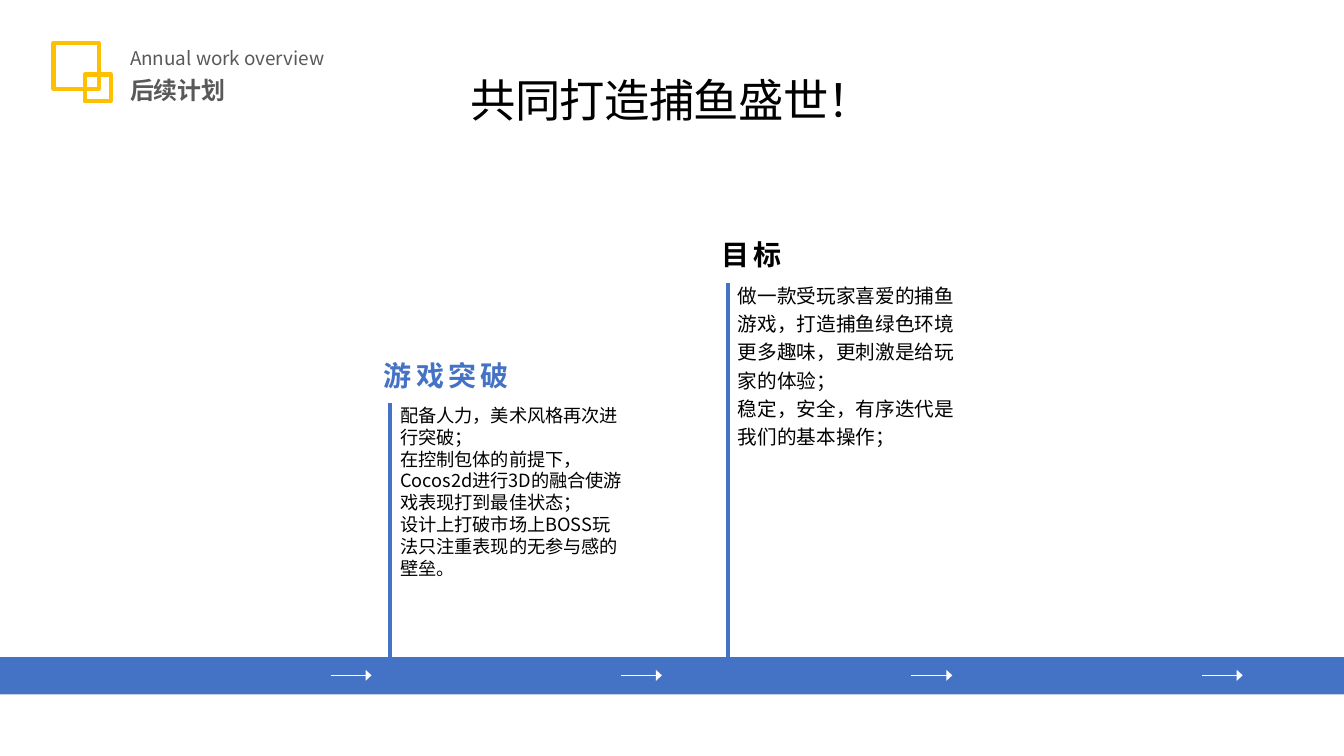
"""Build the follow-up plan slide with two milestones on an arrow band."""
from lxml import etree
from pptx import Presentation
from pptx.dml.color import RGBColor
from pptx.enum.shapes import MSO_CONNECTOR, MSO_SHAPE
from pptx.enum.text import MSO_ANCHOR, MSO_AUTO_SIZE, PP_ALIGN
from pptx.oxml.ns import qn
from pptx.util import Inches, Pt

BLUE = RGBColor(0x44, 0x72, 0xC4)
GOLD = RGBColor(0xFF, 0xC0, 0x02)
GREY = RGBColor(0x59, 0x59, 0x59)
BLACK = RGBColor(0, 0, 0)
WHITE = RGBColor(0xFF, 0xFF, 0xFF)
RECT, TRIANGLE = MSO_SHAPE.RECTANGLE, MSO_SHAPE.ISOSCELES_TRIANGLE
STRAIGHT = MSO_CONNECTOR.STRAIGHT
TOP, BOTTOM = MSO_ANCHOR.TOP, MSO_ANCHOR.BOTTOM
LEFT, CENTER, JUSTIFY = PP_ALIGN.LEFT, PP_ALIGN.CENTER, PP_ALIGN.JUSTIFY
GROW, FIXED = MSO_AUTO_SIZE.SHAPE_TO_FIT_TEXT, MSO_AUTO_SIZE.NONE
CJK, LATIN = "Noto Sans CJK SC", "Arial"

WIDTH, HEIGHT = 13.33, 7.5
BAND_TOP, BAND_HEIGHT = 6.52, 0.37
ARROW_COUNT, ARROW_LEFT, ARROW_PITCH, ARROW_LENGTH = 4, 3.28, 2.88, 0.39
HEAD_WIDTH, HEAD_HEIGHT = 0.11, 0.06
NO_INSET, BODY_INSET, BOX_INSET = (0, 0, 0, 0), (0.1, 0, 0.1, 0.05), (0.1, 0.05, 0.1, 0.05)

LOGO_SQUARES = [(0.53, 0.43, 0.45), (0.84, 0.74, 0.26)]
HEADERS = [
    ("Annual work overview", (1.29, 0.46, 2.26, 0.23), JUSTIFY,
     {"size": Pt(13.5), "bold": False}),
    ("后续计划", (1.29, 0.75, 2.52, 0.29), LEFT, {"size": Pt(17.1), "bold": True}),
]
TITLE = "共同打造捕鱼盛世！"
MILESTONES = [
    {"heading": "游戏突破", "color": BLUE, "x": 3.87, "top": 3.44, "rule": 4.0,
     "body": 4.01, "size": 13, "spacing": None,
     "lines": ["配备人力，美术风格再次进行突破；",
               "在控制包体的前提下，Cocos2d进行3D的融合使游戏表现打到最佳状态；",
               "设计上打破市场上BOSS玩法只注重表现的无参与感的壁垒。"]},
    {"heading": "目标", "color": BLACK, "x": 7.22, "top": 2.24, "rule": 2.81,
     "body": 2.77, "size": 14, "spacing": 1.2,
     "lines": ["做一款受玩家喜爱的捕鱼游戏，打造捕鱼绿色环境",
               "更多趣味，更刺激是给玩家的体验；",
               "稳定，安全，有序迭代是我们的基本操作；"]},
]


def add_text(s, lines, box, color, fmt, inset=BOX_INSET, align=LEFT,
             anchor=TOP, fit=FIXED, spacing=None, tracking=0):
    tf = s.shapes.add_textbox(*map(Inches, box)).text_frame
    sides = ("margin_left", "margin_top", "margin_right", "margin_bottom")
    frame = dict(zip(sides, map(Inches, inset)))
    frame.update(word_wrap=True, vertical_anchor=anchor, auto_size=fit)
    for name, value in frame.items():
        setattr(tf, name, value)
    for i, line in enumerate(lines):
        p = tf.add_paragraph() if i else tf.paragraphs[0]
        p.alignment, p.line_spacing = align, spacing
        r = p.add_run()
        r.text = line
        for name, value in {"name": CJK, **fmt}.items():
            setattr(r.font, name, value)
        r.font.color.rgb = color
        props = r.font._element
        props.set("lang", "zh-CN")
        if tracking:
            props.set("spc", str(int(tracking * 100)))
        etree.SubElement(props, qn("a:ea")).set("typeface", CJK)


def add_shape(s, kind, box, fill=None, line=None):
    sp = s.shapes.add_shape(kind, *map(Inches, box))
    sp.shadow.inherit = False
    if fill is None:
        sp.fill.background()
    else:
        sp.fill.solid()
        sp.fill.fore_color.rgb = fill
    if line is None:
        sp.line.fill.background()
    else:
        sp.line.color.rgb = line
        sp.line.width = Pt(3)
    return sp


def add_line(s, start, end, color, width):
    c = s.shapes.add_connector(STRAIGHT, *map(Inches, start + end))
    c.line.color.rgb = color
    c.line.width = Pt(width)
    etree.SubElement(c._element.spPr, qn("a:effectLst"))


def add_band(s):
    add_shape(s, RECT, (0, BAND_TOP, WIDTH, BAND_HEIGHT), fill=BLUE)
    y = round(BAND_TOP + BAND_HEIGHT / 2, 2)
    for i in range(ARROW_COUNT):
        x = ARROW_LEFT + i * ARROW_PITCH
        tip = x + ARROW_LENGTH
        add_line(s, (x, y), (tip, y), WHITE, 1)
        head = (tip - 0.07, y - HEAD_HEIGHT / 2, HEAD_WIDTH, HEAD_HEIGHT)
        add_shape(s, TRIANGLE, head, fill=WHITE).rotation = 90


def add_milestone(s, m):
    x = m["x"]
    add_line(s, (x, m["rule"]), (x, BAND_TOP), BLUE, 3)
    add_text(s, m["lines"], (x, m["body"], 2.41, 1.24), BLACK,
             {"size": Pt(m["size"])}, BODY_INSET, spacing=m["spacing"])
    add_text(s, [m["heading"]], (x - 0.16, m["top"], 2.56, 0.52), m["color"],
             {"name": LATIN, "size": Pt(20), "bold": True}, spacing=1.2, tracking=3)


def main():
    prs = Presentation()
    prs.slide_width, prs.slide_height = Inches(WIDTH), Inches(HEIGHT)
    s = prs.slides.add_slide(prs.slide_layouts[6])
    for text, box, align, fmt in HEADERS:
        add_text(s, [text], box, GREY, fmt, NO_INSET, align, fit=GROW)
    for x, y, side in LOGO_SQUARES:
        add_shape(s, RECT, (x, y, side, side), line=GOLD)
    add_band(s)
    for m in MILESTONES:
        add_milestone(s, m)
    add_text(s, [TITLE], (1.4, 0.61, 10.53, 0.7), BLACK, {"size": Pt(32.4)},
             align=CENTER, anchor=BOTTOM, tracking=-0.5)
    prs.save("out.pptx")


if __name__ == "__main__":
    main()
